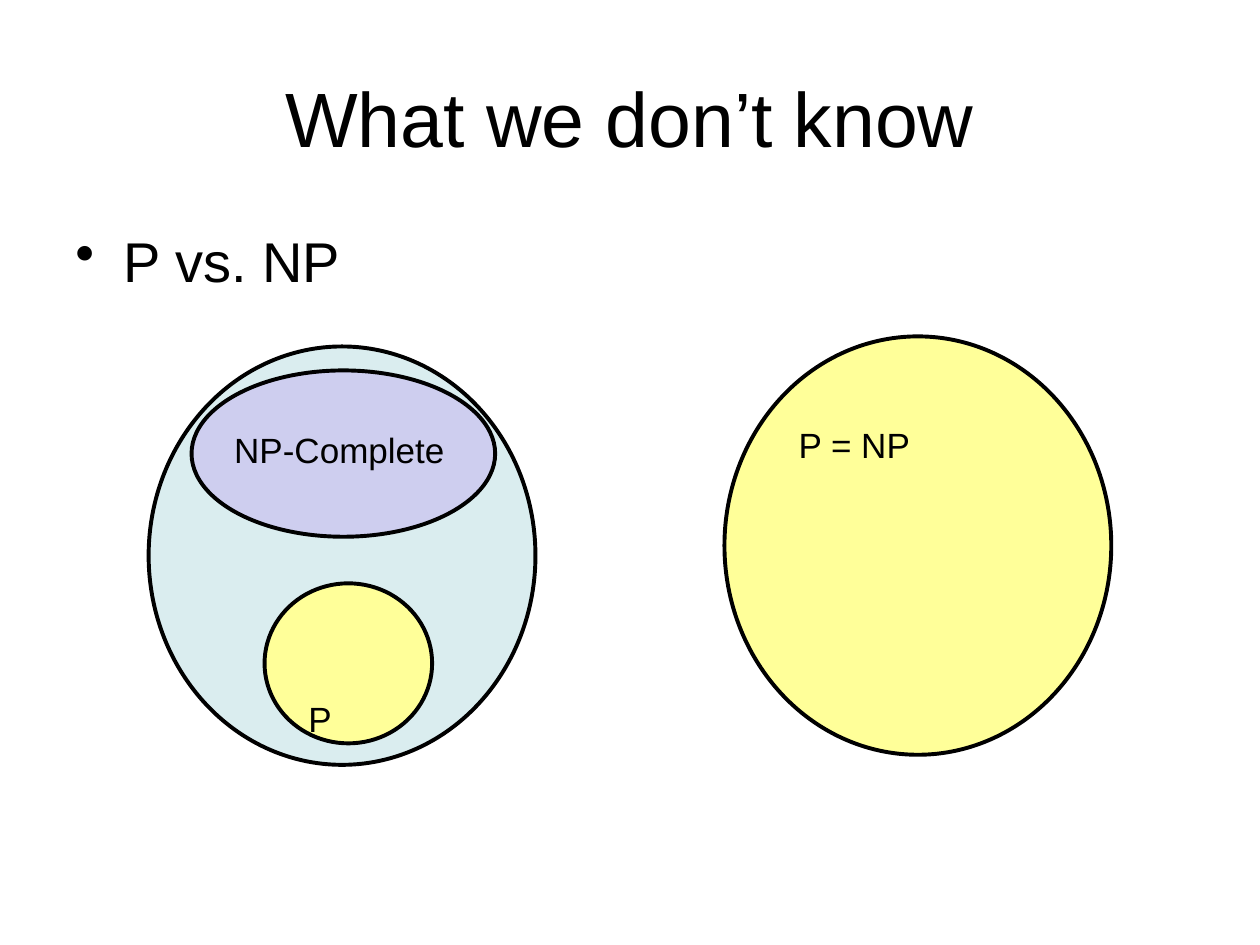
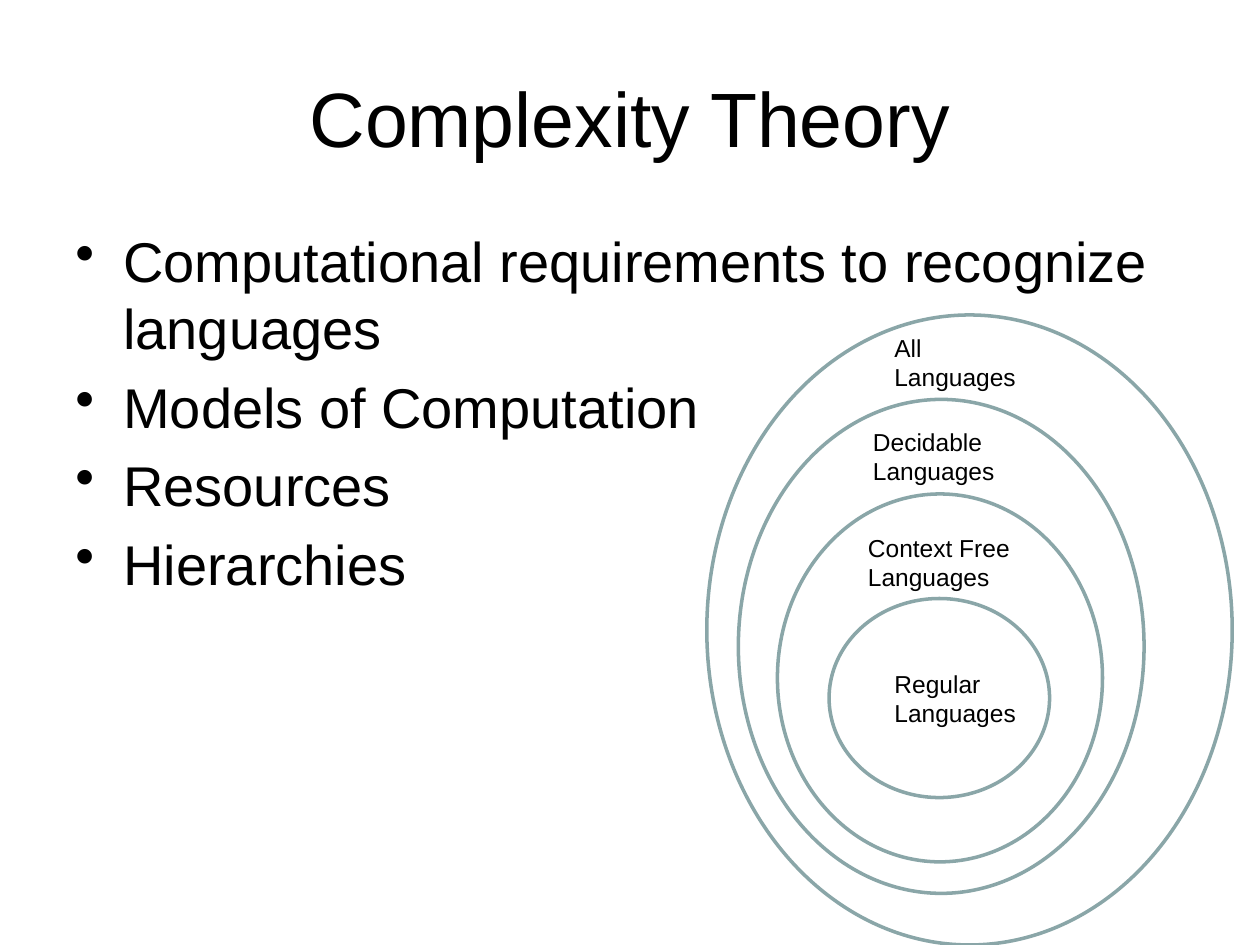
from dataclasses import dataclass

from lxml.etree import SubElement
from pptx import Presentation
from pptx.dml.color import RGBColor
from pptx.enum.shapes import MSO_SHAPE
from pptx.enum.text import MSO_ANCHOR, MSO_AUTO_SIZE, PP_ALIGN
from pptx.oxml.ns import qn
from pptx.util import Inches, Pt


@dataclass(frozen=True)
class Theme:
    font: str = "Arial"
    ink: RGBColor = RGBColor(0, 0, 0)
    paper: RGBColor = RGBColor(0xFF, 0xFF, 0xFF)
    np_blue: RGBColor = RGBColor(0xDA, 0xED, 0xEF)
    p_yellow: RGBColor = RGBColor(0xFF, 0xFF, 0x99)
    complete_violet: RGBColor = RGBColor(0xCE, 0xCE, 0xEF)
    ring: RGBColor = RGBColor(0x8A, 0xA6, 0xA8)
    title_size: float = 44
    bullet_size: float = 32
    class_size: float = 20
    language_size: float = 14
    bullet_gap: float = 6.4
    indent: float = 0.38


theme = Theme()


def write(frame, lines, size, bulleted=False, align=PP_ALIGN.LEFT):
    """Fill a text frame with one paragraph per line."""
    frame.word_wrap = True
    for number, line in enumerate(lines):
        paragraph = frame.paragraphs[0] if number == 0 else frame.add_paragraph()
        paragraph.text = line
        paragraph.alignment = align
        if bulleted:
            paragraph.space_before = Pt(theme.bullet_gap if number else 0)
            properties = paragraph._p.get_or_add_pPr()
            properties.set("marL", str(Inches(theme.indent)))
            properties.set("indent", str(-Inches(theme.indent)))
            SubElement(properties, qn("a:buChar"), char="•")
        font_format = {"name": theme.font, "size": Pt(size)}
        for attribute, value in font_format.items():
            setattr(paragraph.font, attribute, value)
        paragraph.font.color.rgb = theme.ink


def add_set(slide, box, fill, line, width):
    """Draw one set of the diagram as an ellipse."""
    ellipse = slide.shapes.add_shape(MSO_SHAPE.OVAL, *map(Inches, box))
    ellipse.shadow.inherit = False
    if fill is None:
        ellipse.fill.background()
    else:
        ellipse.fill.solid()
        ellipse.fill.fore_color.rgb = fill
    ellipse.line.color.rgb = line
    ellipse.line.width = Pt(width)


# Content: each set is (box, fill), each label is (text, box)
topics = [
    {
        "title": "What we don’t know",
        "bullets": ["P vs. NP"],
        "bullets_height": 1.34,
        "outline": (theme.ink, 2.25),
        "sets": [
            ((1.18, 2.75, 3.07, 3.32), theme.np_blue),
            ((2.1, 4.63, 1.33, 1.27), theme.p_yellow),
            ((1.52, 2.94, 2.41, 1.32), theme.complete_violet),
            ((5.75, 2.67, 3.07, 3.32), theme.p_yellow),
        ],
        "label_size": theme.class_size,
        "labels": [
            ("NP-Complete", (1.76, 3.35, 1.91, 0.43)),
            ("P", (2.35, 5.49, 0.83, 0.43)),
            ("P = NP", (6.24, 3.31, 1.33, 0.44)),
        ],
    },
    {
        "title": "Complexity Theory",
        "bullets": [
            "Computational requirements to recognize languages",
            "Models of Computation",
            "Resources",
            "Hierarchies",
        ],
        "bullets_height": 4.95,
        "outline": (theme.ring, 2),
        "sets": [
            ((6.58, 4.75, 1.75, 1.58), theme.paper),
            ((6.17, 3.92, 2.58, 2.92), None),
            ((5.86, 3.17, 3.22, 3.92), None),
            ((5.61, 2.5, 4.17, 5), None),
        ],
        "label_size": theme.language_size,
        "labels": [
            ("Regular Languages", (7, 5.26, 1.19, 0.57)),
            ("Context Free Languages", (6.79, 4.18, 1.33, 0.57)),
            ("Decidable Languages", (6.83, 3.34, 1.33, 0.57)),
            ("All Languages", (7, 2.59, 1.33, 0.57)),
        ],
    },
]

deck = Presentation()
deck.slide_width, deck.slide_height = Inches(10), Inches(7.5)
title_only = deck.slide_layouts[5]

for topic in topics:
    slide = deck.slides.add_slide(title_only)
    slide.background.fill.solid()
    slide.background.fill.fore_color.rgb = theme.paper

    # Title
    heading = slide.shapes.title
    place = {"left": 0.5, "top": 0.3, "width": 9, "height": 1.25}
    for attribute, value in place.items():
        setattr(heading, attribute, Inches(value))
    heading.text_frame.auto_size = MSO_AUTO_SIZE.NONE
    heading.text_frame.vertical_anchor = MSO_ANCHOR.MIDDLE
    write(heading.text_frame, [topic["title"]], theme.title_size, align=PP_ALIGN.CENTER)

    # Bullets
    bullets = slide.shapes.add_textbox(
        Inches(0.5), Inches(1.75), Inches(9), Inches(topic["bullets_height"])
    )
    write(bullets.text_frame, topic["bullets"], theme.bullet_size, bulleted=True)

    # Set diagram
    for box, fill in topic["sets"]:
        add_set(slide, box, fill, *topic["outline"])

    # Set labels
    for text, box in topic["labels"]:
        label = slide.shapes.add_textbox(*map(Inches, box))
        label.text_frame.auto_size = MSO_AUTO_SIZE.SHAPE_TO_FIT_TEXT
        write(label.text_frame, [text], topic["label_size"])

deck.save("out.pptx")
